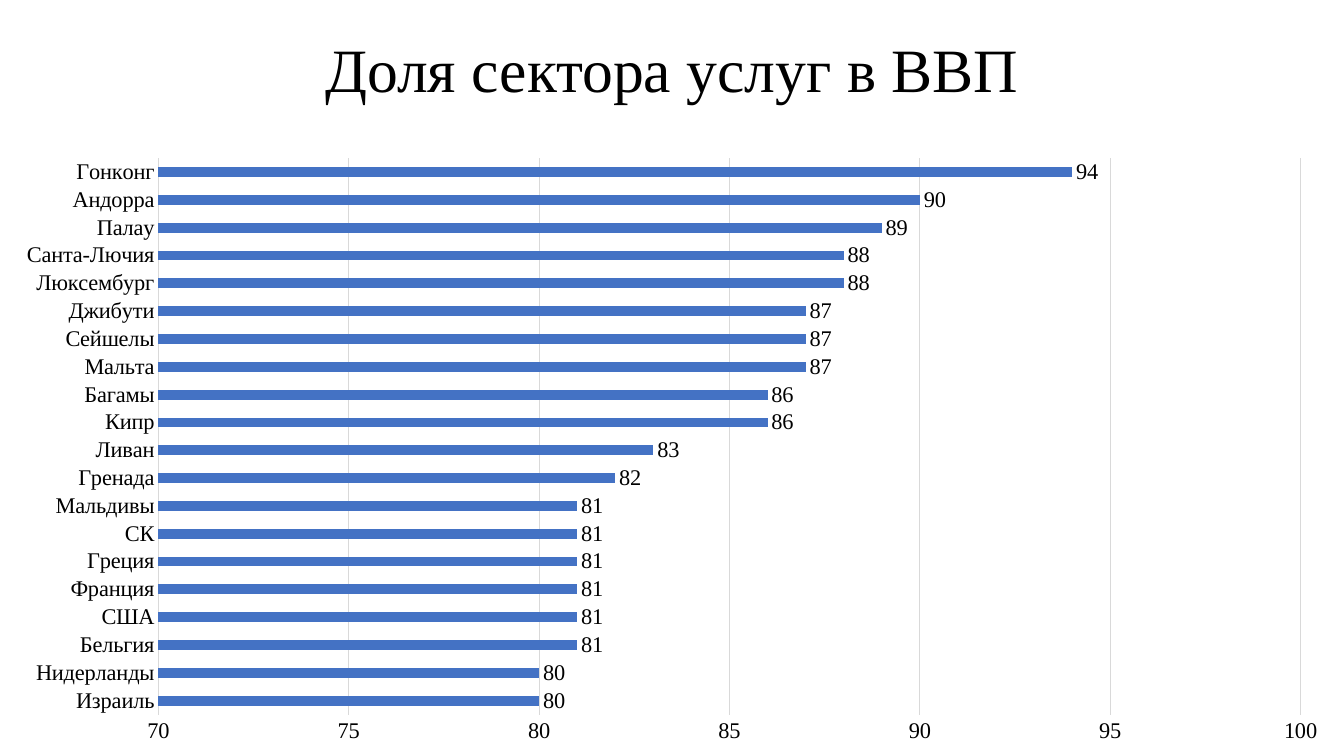
from pptx import Presentation
from pptx.chart.data import CategoryChartData
from pptx.dml.color import RGBColor
from pptx.enum.chart import XL_CHART_TYPE, XL_LABEL_POSITION, XL_TICK_MARK
from pptx.enum.text import MSO_ANCHOR, PP_ALIGN
from pptx.util import Cm, Pt

TITLE = "Доля сектора услуг в ВВП"
SHARES = [
    ("Израиль", 80), ("Нидерланды", 80), ("Бельгия", 81), ("США", 81),
    ("Франция", 81), ("Греция", 81), ("СК", 81), ("Мальдивы", 81),
    ("Гренада", 82), ("Ливан", 83), ("Кипр", 86), ("Багамы", 86),
    ("Мальта", 87), ("Сейшелы", 87), ("Джибути", 87), ("Люксембург", 88),
    ("Санта-Лючия", 88), ("Палау", 89), ("Андорра", 90), ("Гонконг", 94),
]
COLORS = {"text": "000000", "bar": "4472C4", "grid": "D9D9D9"}
FONT = "Times New Roman"
WIDTH, HEIGHT, TITLE_H = Cm(33.87), Cm(19.05), Cm(3.68)


def color(name):
    return RGBColor.from_string(COLORS[name])


def style_font(font, size):
    font.name = FONT
    font.size = Pt(size)
    font.color.rgb = color("text")


def style_line(line):
    line.color.rgb = color("grid")
    line.width = Pt(0.75)


def add_title(s):
    tf = s.shapes.add_textbox(0, 0, WIDTH, TITLE_H).text_frame
    tf.word_wrap = True
    tf.vertical_anchor = MSO_ANCHOR.MIDDLE
    p = tf.paragraphs[0]
    p.text = TITLE
    p.alignment = PP_ALIGN.CENTER
    p.line_spacing = 0.9
    style_font(p.runs[0].font, 44)


def add_share_chart(s):
    data = CategoryChartData()
    data.categories = [country for country, share in SHARES]
    data.add_series("Доля услуг", [share for country, share in SHARES])
    chart = s.shapes.add_chart(XL_CHART_TYPE.BAR_CLUSTERED, 0, TITLE_H,
                               WIDTH, HEIGHT - TITLE_H, data).chart
    chart.has_legend = False
    chart.has_title = False
    style_font(chart.font, 16)

    countries, scale = chart.category_axis, chart.value_axis
    for axis in (countries, scale):
        axis.major_tick_mark = axis.minor_tick_mark = XL_TICK_MARK.NONE
        style_font(axis.tick_labels.font, 16)
    countries.has_major_gridlines = False
    style_line(countries.format.line)
    scale.minimum_scale, scale.maximum_scale, scale.major_unit = 70, 100, 5
    scale.format.line.fill.background()
    style_line(scale.major_gridlines.format.line)

    plot = chart.plots[0]
    plot.gap_width = 182
    plot.vary_by_categories = False
    bars = plot.series[0]
    bars.format.fill.solid()
    bars.format.fill.fore_color.rgb = color("bar")
    labels = bars.data_labels
    labels.show_value = True
    labels.position = XL_LABEL_POSITION.OUTSIDE_END
    style_font(labels.font, 16)


def main():
    """Build the slide on the share of services in GDP."""
    prs = Presentation()
    prs.slide_width, prs.slide_height = WIDTH, HEIGHT
    s = prs.slides.add_slide(prs.slide_layouts[6])
    add_title(s)
    add_share_chart(s)
    prs.save("out.pptx")


if __name__ == "__main__":
    main()
